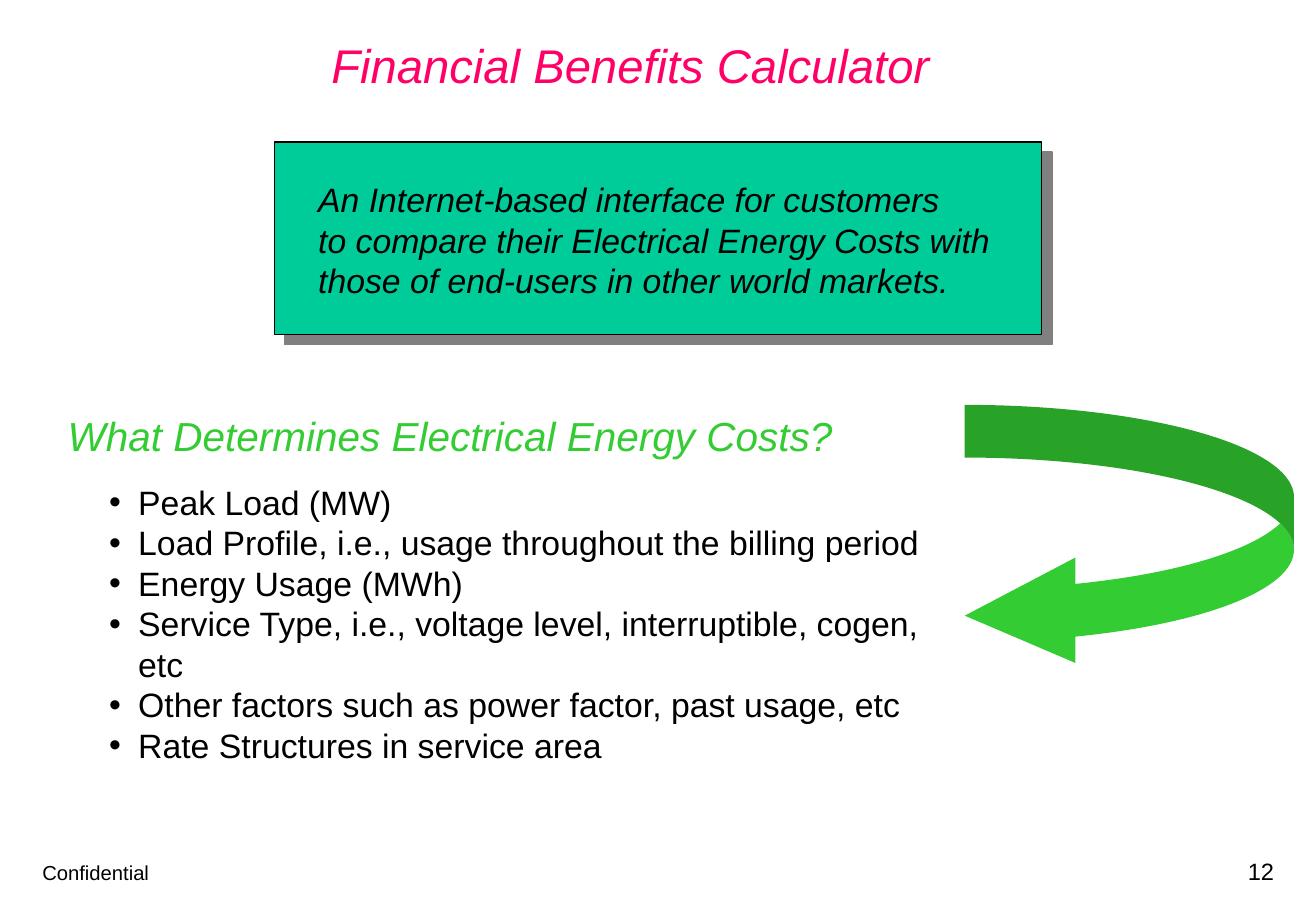
"""Build the Financial Benefits Calculator slide."""
from lxml.etree import SubElement
from pptx import Presentation
from pptx.dml.color import RGBColor
from pptx.enum.shapes import MSO_SHAPE
from pptx.enum.text import PP_ALIGN
from pptx.oxml.ns import qn
from pptx.util import Pt

COLOURS = {
    "title": "FF0066",
    "heading": "33CC33",
    "panel": "00CC99",
    "shadow": "808080",
    "text": "000000",
}


def colour(name):
    return RGBColor.from_string(COLOURS[name])


def add_text(slide, box, lines, size, tone="text", italic=False, wrap=False):
    frame = slide.shapes.add_textbox(*map(Pt, box)).text_frame
    frame.word_wrap = wrap
    frame.text = "\n".join(lines)
    font_format = {"name": "Arial", "size": Pt(size), "italic": italic}
    for paragraph in frame.paragraphs:
        for run in paragraph.runs:
            for attribute, value in font_format.items():
                setattr(run.font, attribute, value)
            run.font.color.rgb = colour(tone)
    return frame.paragraphs


deck = Presentation()
deck.slide_width = Pt(780.25)
deck.slide_height = Pt(540)
slide = deck.slides.add_slide(deck.slide_layouts[6])

add_text(slide, (18, 506.5, 154, 21.6), ["Confidential"], 12, wrap=True)
add_text(slide, (189.4, 18, 368.6, 41), ["Financial Benefits Calculator"], 28,
         "title", italic=True)

panel = slide.shapes.add_shape(
    MSO_SHAPE.RECTANGLE, Pt(162.7), Pt(84.2), Pt(455), Pt(114))
panel.shadow.inherit = False
panel.fill.solid()
panel.fill.fore_color.rgb = colour("panel")
panel.line.color.rgb = colour("text")
panel.line.width = Pt(0.75)
effects = panel._element.spPr.find(qn("a:effectLst"))
panel_shadow = SubElement(effects, qn("a:outerShdw"), dist=str(Pt(8.5)),
                          dir="2700000", algn="ctr", rotWithShape="0")
SubElement(panel_shadow, qn("a:srgbClr"), val=COLOURS["shadow"])

add_text(slide, (181.6, 102.5, 413.3, 79.2), [
    "An Internet-based interface for customers",
    "to compare their Electrical Energy Costs with",
    "those of end-users in other world markets.",
], 20, italic=True)

cost_factors = add_text(slide, (57.6, 282, 517.7, 151.2), [
    "Peak Load (MW)",
    "Load Profile, i.e., usage throughout the billing period",
    "Energy Usage (MWh)",
    "Service Type, i.e., voltage level, interruptible, cogen, etc",
    "Other factors such as power factor, past usage, etc",
    "Rate Structures in service area",
], 20, wrap=True)
for factor in cost_factors:
    properties = factor._p.get_or_add_pPr()
    properties.set("marL", str(Pt(17.25)))
    properties.set("indent", str(-Pt(17.25)))
    SubElement(properties, qn("a:buFont"), typeface="Arial")
    SubElement(properties, qn("a:buChar"), char="•")

add_text(slide, (33.1, 240, 468, 36), ["What Determines Electrical Energy Costs?"],
         24, "heading", italic=True)

return_arrow = slide.shapes.add_shape(
    MSO_SHAPE.CURVED_LEFT_ARROW, Pt(572), Pt(240), Pt(195.2), Pt(156.2))
return_arrow.shadow.inherit = False
return_arrow.fill.solid()
return_arrow.fill.fore_color.rgb = colour("heading")
return_arrow.line.fill.background()
for index, proportion in enumerate((0.2, 0.4, 0.42)):
    return_arrow.adjustments[index] = proportion

page_number = add_text(slide, (599.8, 504.5, 162.7, 36), ["12"], 14, wrap=True)
page_number[0].alignment = PP_ALIGN.RIGHT

deck.save("out.pptx")
